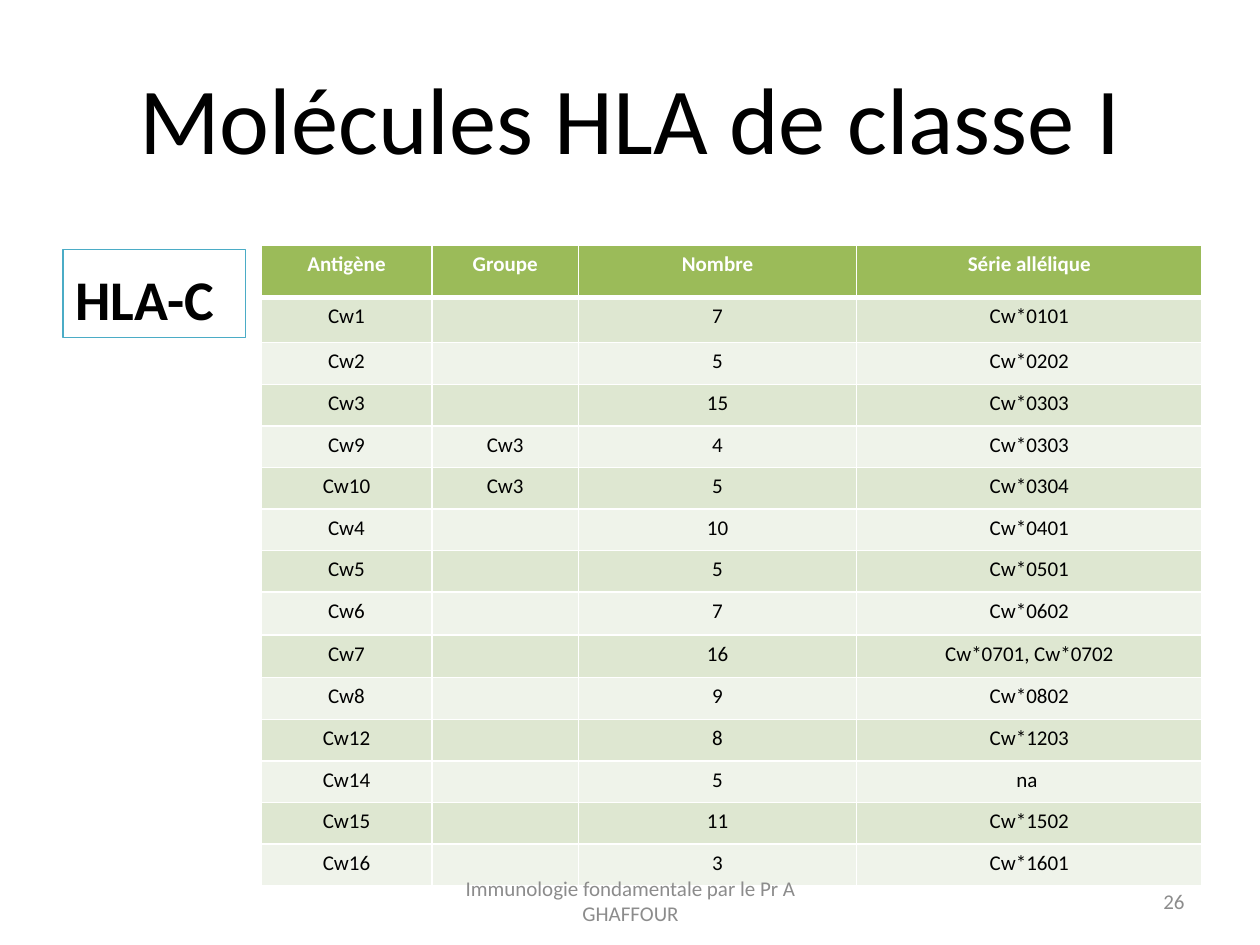
from lxml.etree import SubElement as Sub
from pptx import Presentation
from pptx.dml.color import RGBColor as Rgb
from pptx.enum.text import MSO_ANCHOR as Anchor, MSO_AUTO_SIZE as Auto, PP_ALIGN as Align
from pptx.oxml.ns import qn
from pptx.util import Inches, Pt

WIDE, HIGH = 10, 7.5
COLS, ROWS = 100, 75


def tint(code):
    return Rgb.from_string(code)


class Deck:
    font = "Calibri"
    black, white, grey = "000000", "FFFFFF", "8C8C8C"
    head, bands, edge = "9BBB59", ("DEE7D1", "EFF3EA"), "4BACC6"

    def __init__(self):
        self.show = Presentation()
        self.show.slide_width, self.show.slide_height = Inches(WIDE), Inches(HIGH)
        self.slide = self.show.slides.add_slide(self.show.slide_layouts[4])
        for spare in list(self.slide.placeholders):
            if spare.placeholder_format.idx > 1:
                spare.element.getparent().remove(spare.element)

    def span(self, count):
        return Inches(count * WIDE / COLS)

    def drop(self, count):
        return Inches(count * HIGH / ROWS)

    def box(self, left, top, wide, high):
        return self.span(left), self.drop(top), self.span(wide), self.drop(high)

    def letter(self, frame, text, size, color, align, bold=False):
        frame.text = text
        line = frame.paragraphs[0]
        line.alignment = align
        for run in line.runs:
            run.font.name, run.font.size, run.font.bold = self.font, Pt(size), bold
            run.font.color.rgb = tint(color)
        if not text:
            Sub(line._p, qn("a:endParaRPr"), sz=str(size * 100))

    def holder(self, idx, place, text, size, align, anchor, bold=False):
        shape = self.slide.placeholders[idx]
        shape.left, shape.top, shape.width, shape.height = self.box(*place)
        frame = shape.text_frame
        self.letter(frame, text, size, self.black, align, bold)
        frame.vertical_anchor, frame.auto_size = anchor, Auto.NONE
        return shape

    def title(self, place, text):
        self.holder(0, place, text, 54, Align.CENTER, Anchor.MIDDLE)

    def label(self, place, text):
        shape = self.holder(1, place, text, 32, Align.LEFT, Anchor.BOTTOM, True)
        shape.line.color.rgb, shape.line.width = tint(self.edge), Pt(0.75)

    def note(self, place, text, align):
        frame = self.slide.shapes.add_textbox(*self.box(*place)).text_frame
        frame.word_wrap, frame.vertical_anchor = True, Anchor.MIDDLE
        self.letter(frame, text, 12, self.grey, align)

    def border(self, cell, base):
        props = cell._tc.get_or_add_tcPr()
        for side in "LRTB":
            width = Pt(base if side == "B" else 1)
            line = Sub(props, qn(f"a:ln{side}"), w=str(width))
            Sub(Sub(line, qn("a:solidFill")), qn("a:srgbClr"), val=self.white)

    def table(self, place, wides, highs, data):
        grid = self.slide.shapes.add_table(len(data), len(wides), *self.box(*place)).table
        for col, wide in zip(grid.columns, wides):
            col.width = self.span(wide)
        for row, high in zip(grid.rows, highs):
            row.height = self.drop(high)
        for r, texts in enumerate(data):
            top = r == 0
            for c, text in enumerate(texts):
                cell = grid.cell(r, c)
                cell.margin_left = cell.margin_right = Inches(0.05)
                cell.margin_top = cell.margin_bottom = Inches(0.05)
                self.border(cell, 3 if top else 1)
                cell.fill.solid()
                cell.fill.fore_color.rgb = tint(self.head if top else self.bands[(r - 1) % 2])
                color = self.white if top else self.black
                self.letter(cell.text_frame, text, 12, color, Align.CENTER, top)


ALLELES = [
    ("Antigène", "Groupe", "Nombre", "Série allélique"),
    ("Cw1", "", "7", "Cw*0101"),
    ("Cw2", "", "5", "Cw*0202"),
    ("Cw3", "", "15", "Cw*0303"),
    ("Cw9", "Cw3", "4", "Cw*0303"),
    ("Cw10", "Cw3", "5", "Cw*0304"),
    ("Cw4", "", "10", "Cw*0401"),
    ("Cw5", "", "5", "Cw*0501"),
    ("Cw6", "", "7", "Cw*0602"),
    ("Cw7", "", "16", "Cw*0701, Cw*0702"),
    ("Cw8", "", "9", "Cw*0802"),
    ("Cw12", "", "8", "Cw*1203"),
    ("Cw14", "", "5", "na "),
    ("Cw15", "", "11", "Cw*1502"),
    ("Cw16", "", "3", "Cw*1601"),
]


def main():
    deck = Deck()
    deck.title((5, 3, 90, 12.5), "Molécules HLA de classe I")
    deck.label((5, 19.8, 14.5, 7), "HLA-C")
    highs = [4.1, 3.6] + [3.3] * 6 + [3.4] * 2 + [3.3] * 5
    deck.table((20.7, 19.5, 74.7, 50.8), [13.6, 11.6, 22.1, 27.4], highs, ALLELES)
    deck.note((34.2, 69.5, 31.7, 4), "Immunologie fondamentale par le Pr A GHAFFOUR", Align.CENTER)
    deck.note((71.7, 69.5, 23.3, 4), "26", Align.RIGHT)
    deck.show.save("out.pptx")


if __name__ == "__main__":
    main()
